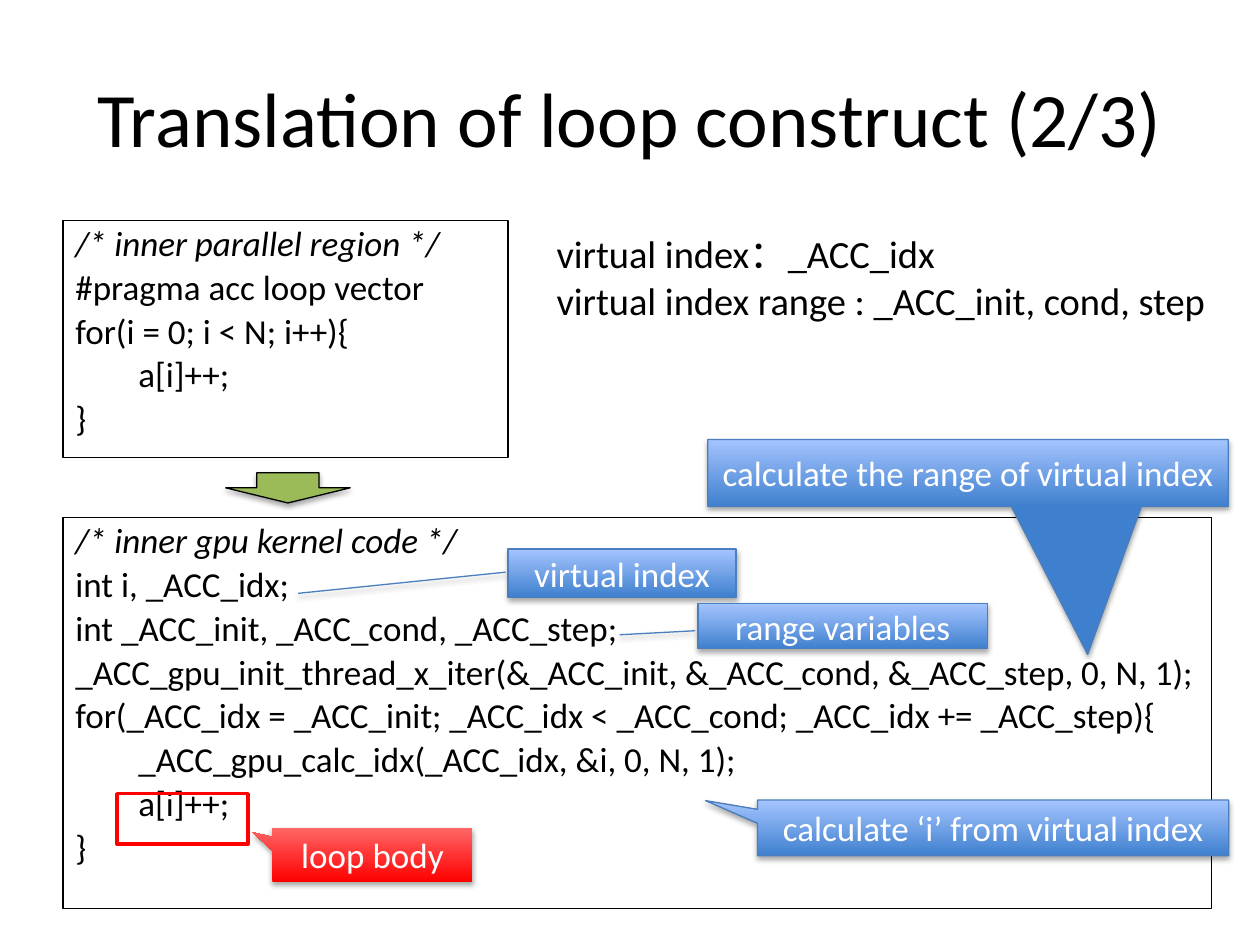
from lxml import etree
from pptx import Presentation
from pptx import util as u
from pptx.dml.color import RGBColor
from pptx.enum import shapes, text
from pptx.oxml.ns import qn

FONT = "Calibri"
BLACK, WHITE, RED, GREEN = "000000", "FFFFFF", "FF0000", "9BBB59"
BLUE_FILL, BLUE_LINE = ("3F80CE", "A4C4FF"), "4B7EBC"
RED_FILL = (RED, "FF6666")

SOURCE_CODE = """/* inner parallel region */
#pragma acc loop vector
for(i = 0; i < N; i++){
\ta[i]++;
}"""

KERNEL_CODE = """/* inner gpu kernel code */
int i, _ACC_idx;
int _ACC_init, _ACC_cond, _ACC_step;
_ACC_gpu_init_thread_x_iter(&_ACC_init, &_ACC_cond, &_ACC_step, 0, N, 1);
for(_ACC_idx = _ACC_init; _ACC_idx < _ACC_cond; _ACC_idx += _ACC_step){
\t_ACC_gpu_calc_idx(_ACC_idx, &i, 0, N, 1);
 \ta[i]++;
}"""


def rgb(value):
    return RGBColor.from_string(value)


def box(values):
    return [u.Cm(value) for value in values]


def write(shape, content, size, color=BLACK, align=text.PP_ALIGN.LEFT,
          anchor=text.MSO_ANCHOR.TOP):
    frame = shape.text_frame
    frame.text = content
    frame.vertical_anchor = anchor
    for paragraph in frame.paragraphs:
        paragraph.alignment = align
        font = paragraph.font
        font.name, font.size, font.color.rgb = FONT, u.Pt(size), rgb(color)


def add_text(slide, place, content, size, wrap=True, **layout):
    shape = slide.shapes.add_textbox(*box(place))
    shape.text_frame.word_wrap = wrap
    write(shape, content, size, **layout)


def add_shape(slide, kind, place, fill=None, line=None, width=0.75):
    """Draw a preset shape; a pair of colours as fill runs from bottom to top."""
    shape = slide.shapes.add_shape(kind, *box(place))
    shape.shadow.inherit = False
    if fill is None:
        shape.fill.background()
    elif isinstance(fill, tuple):
        shape.fill.gradient()
        shape.fill.gradient_angle = 90
        for stop, color in zip(shape.fill.gradient_stops, fill):
            stop.color.rgb = rgb(color)
    else:
        shape.fill.solid()
        shape.fill.fore_color.rgb = rgb(fill)
    if line is None:
        shape.line.fill.background()
    else:
        shape.line.color.rgb = rgb(line)
        shape.line.width = u.Pt(width)
    return shape


def add_shadow(shape):
    effects = shape._element.spPr.find(qn("a:effectLst"))
    shadow = etree.SubElement(
        effects, qn("a:outerShdw"), blurRad=str(u.Pt(3.1)),
        dist=str(u.Pt(1.8)), dir="5400000", rotWithShape="0")
    color = etree.SubElement(shadow, qn("a:srgbClr"), val=BLACK)
    etree.SubElement(color, qn("a:alpha"), val="35000")


def add_code(slide, place, code):
    """Frame a listing whose first line is an italic comment."""
    shape = add_shape(slide, shapes.MSO_SHAPE.RECTANGLE, place, line=BLACK)
    write(shape, code, 20)
    paragraphs = shape.text_frame.paragraphs
    paragraphs[0].font.italic = True
    for paragraph in paragraphs:
        paragraph.line_spacing = u.Pt(21)
        paragraph.space_before = u.Pt(4)
        tabs = etree.Element(qn("a:tabLst"))
        etree.SubElement(tabs, qn("a:tab"), pos=str(u.Cm(1.27)), algn="l")
        properties = paragraph._p.get_or_add_pPr()
        properties.find(qn("a:defRPr")).addprevious(tabs)


def add_callout(slide, kind, place, label, pointer, fill=BLUE_FILL,
                line=BLUE_LINE):
    shape = add_shape(slide, kind, place, fill, line)
    for index, value in enumerate(pointer):
        shape.adjustments[index] = value
    add_shadow(shape)
    write(shape, label, 20, WHITE, text.PP_ALIGN.CENTER,
          text.MSO_ANCHOR.MIDDLE)


def main():
    presentation = Presentation()
    presentation.slide_width, presentation.slide_height = box((25.4, 19.05))
    slide = presentation.slides.add_slide(presentation.slide_layouts[6])
    wedge = shapes.MSO_SHAPE.RECTANGULAR_CALLOUT
    leader = shapes.MSO_SHAPE.LINE_CALLOUT_1

    add_text(slide, (1.27, 0.76, 22.86, 3.18),
             "Translation of loop construct (2/3)", 44,
             align=text.PP_ALIGN.CENTER, anchor=text.MSO_ANCHOR.MIDDLE)
    add_code(slide, (1.27, 4.45, 8.97, 4.78), SOURCE_CODE)
    arrow = add_shape(slide, shapes.MSO_SHAPE.DOWN_ARROW,
                      (4.55, 9.53, 2.51, 0.61), GREEN, BLACK)
    add_shadow(arrow)
    add_code(slide, (1.27, 10.44, 23.16, 7.87), KERNEL_CODE)
    add_text(slide, (10.97, 4.52, 13.82, 2.13),
             "virtual index：_ACC_idx\n"
             "virtual index range : _ACC_init, cond, step", 22, wrap=False)

    add_callout(slide, wedge, (15.27, 16.13, 9.5, 1.12),
                "calculate ‘i’ from virtual index", (-0.61, -0.49))
    add_callout(slide, wedge, (14.27, 8.86, 10.49, 1.35),
                "calculate the range of virtual index", (0.23, 2.71))
    add_callout(slide, leader, (10.24, 11.07, 4.6, 0.97),
                "virtual index", (0.48, -0.01, 0.92, -0.92))
    add_callout(slide, leader, (14.07, 12.17, 5.84, 0.91),
                "range variables", (0.6, -0.01, 0.69, -0.27))
    add_shape(slide, shapes.MSO_SHAPE.RECTANGLE, (2.36, 16, 2.64, 1.02),
              line=RED, width=2)
    add_callout(slide, wedge, (5.49, 16.69, 4.04, 1.09),
                "loop body", (-0.6, -0.42), RED_FILL, None)

    presentation.save("out.pptx")


if __name__ == "__main__":
    main()
